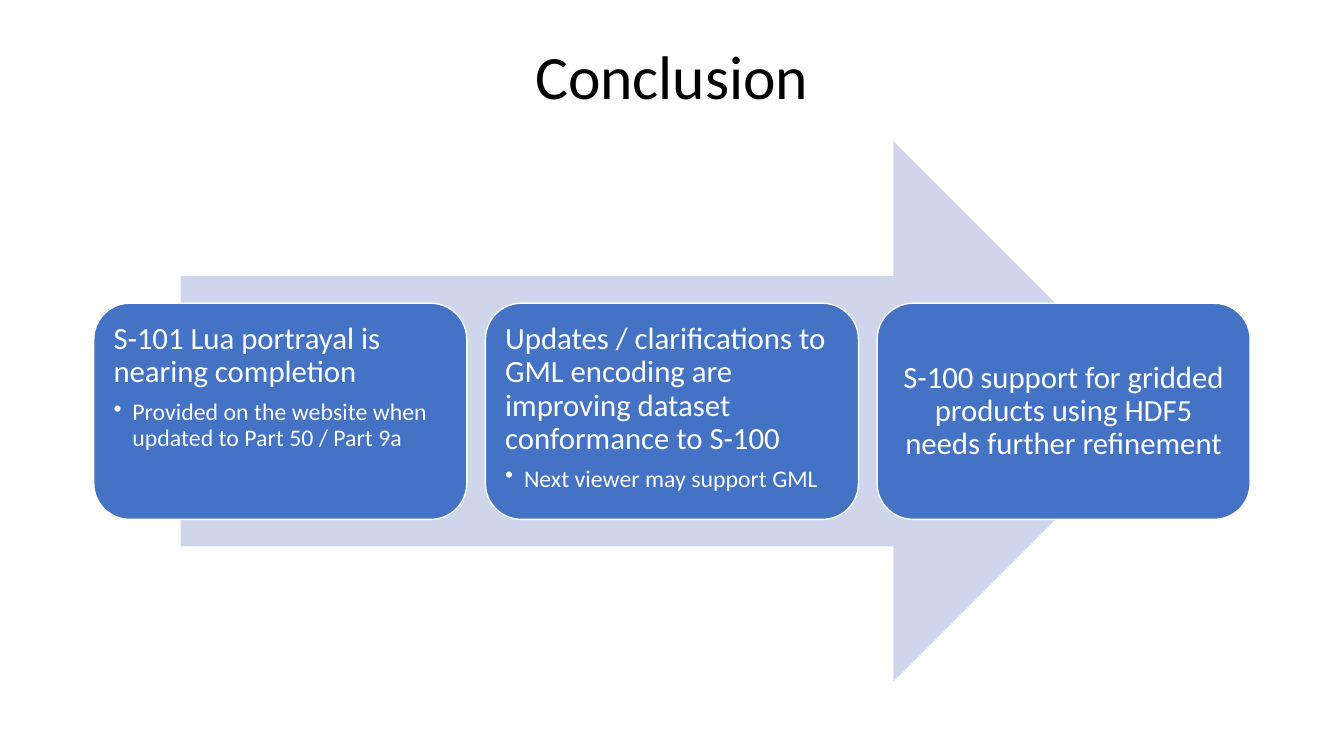
from dataclasses import dataclass

import pptx
import pptx.dml.color
import pptx.enum.shapes
import pptx.enum.text
import pptx.oxml
import pptx.oxml.ns
import pptx.util
from pptx.util import Pt


@dataclass(frozen=True)
class Theme:
    """Colours, font and type sizes of the slide."""
    font: str = "Calibri"
    ink: str = "000000"
    paper: str = "FFFFFF"
    arrow: str = "CFD5EA"
    card: str = "4472C4"
    title_size: float = 44
    point_size: float = 22
    detail_size: float = 17


THEME = Theme()
ALIGN = pptx.enum.text.PP_ALIGN
ANCHOR = pptx.enum.text.MSO_ANCHOR
SHAPE = pptx.enum.shapes.MSO_SHAPE

CONCLUSIONS = [
    ("S-101 Lua portrayal is nearing completion",
     "Provided on the website when updated to Part 50 / Part 9a"),
    ("Updates / clarifications to GML encoding are improving dataset conformance to S-100",
     "Next viewer may support GML"),
    ("S-100 support for gridded products using HDF5 needs further refinement", None),
]


def rgb(code):
    """Turn a hex code into a colour."""
    return pptx.dml.color.RGBColor.from_string(code)


def style(paragraph, size, color, align, space_after=0):
    """Set the type and spacing of one paragraph."""
    paragraph.font.name = THEME.font
    paragraph.font.size = Pt(size)
    paragraph.font.color.rgb = rgb(color)
    paragraph.alignment = align
    paragraph.line_spacing = 0.9
    paragraph.space_before = Pt(0)
    paragraph.space_after = Pt(space_after)


def add_bullet(paragraph, indent):
    """Give a paragraph a hanging round bullet."""
    properties = paragraph._p.get_or_add_pPr()
    properties.set("marL", str(Pt(indent)))
    properties.set("indent", str(-Pt(indent)))
    bullet = pptx.oxml.parse_xml(
        f'<a:buChar {pptx.oxml.ns.nsdecls("a")} char="•"/>')
    properties.append(bullet)


def add_block(slide, kind, box, fill):
    """Add a plain filled shape in the box."""
    block = slide.shapes.add_shape(kind, *map(Pt, box))
    block.shadow.inherit = False
    block.fill.solid()
    block.fill.fore_color.rgb = rgb(fill)
    block.line.fill.background()
    return block


def place_title(slide, box, wording):
    """Fill the title placeholder and fit it to the box."""
    title = slide.shapes.title
    title.left, title.top, title.width, title.height = map(Pt, box)
    title.text_frame.text = wording
    title.text_frame.vertical_anchor = ANCHOR.MIDDLE
    style(title.text_frame.paragraphs[0], THEME.title_size, THEME.ink, ALIGN.CENTER)


def add_card(slide, box, point, detail):
    """Add one rounded card with a point and an optional bulleted detail."""
    card = add_block(slide, SHAPE.ROUNDED_RECTANGLE, box, THEME.card)
    card.line.color.rgb = rgb(THEME.paper)
    card.line.width = Pt(1)
    frame = card.text_frame
    frame.word_wrap = True
    frame.margin_left = frame.margin_right = Pt(6.6)
    frame.margin_top = frame.margin_bottom = Pt(6.6)
    frame.vertical_anchor = ANCHOR.TOP if detail else ANCHOR.MIDDLE
    frame.text = point
    style(frame.paragraphs[0], THEME.point_size, THEME.paper,
          ALIGN.LEFT if detail else ALIGN.CENTER, 0.35 * THEME.point_size)
    if detail:
        note = frame.add_paragraph()
        note.text = detail
        note.level = 1
        style(note, THEME.detail_size, THEME.paper, ALIGN.LEFT, 0.15 * THEME.detail_size)
        add_bullet(note, 13.5)


def add_process(slide, box, conclusions):
    """Lay a row of equal cards over a wide arrow inside the box."""
    left, top, width, height = box
    arrow_width = 0.85 * width
    arrow_box = (left + (width - arrow_width) / 2, top, arrow_width, height)
    add_block(slide, SHAPE.RIGHT_ARROW, arrow_box, THEME.arrow)

    gap, card_height = 13.3, 0.4 * height
    count = len(conclusions)
    card_width = (width - gap * (count - 1)) / count
    card_top = top + (height - card_height) / 2
    for index, (point, detail) in enumerate(conclusions):
        card_left = left + index * (card_width + gap)
        add_card(slide, (card_left, card_top, card_width, card_height), point, detail)


def main():
    """Build and save the conclusion slide."""
    deck = pptx.Presentation()
    deck.slide_width, deck.slide_height = Pt(960), Pt(540)
    slide = deck.slides.add_slide(deck.slide_layouts[5])
    place_title(slide, (66, 28.6, 828, 57), "Conclusion")
    add_process(slide, (67, 100.8, 826, 386), CONCLUSIONS)
    deck.save("out.pptx")


if __name__ == "__main__":
    main()
